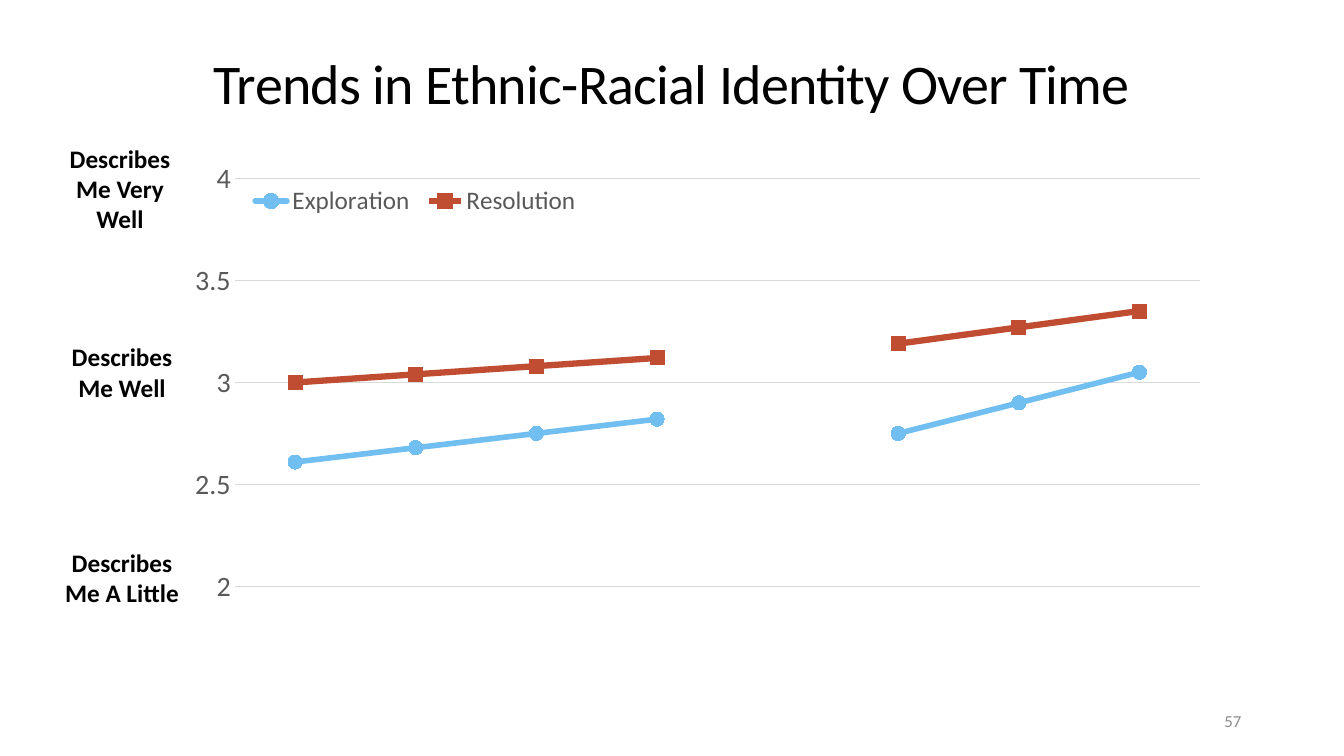
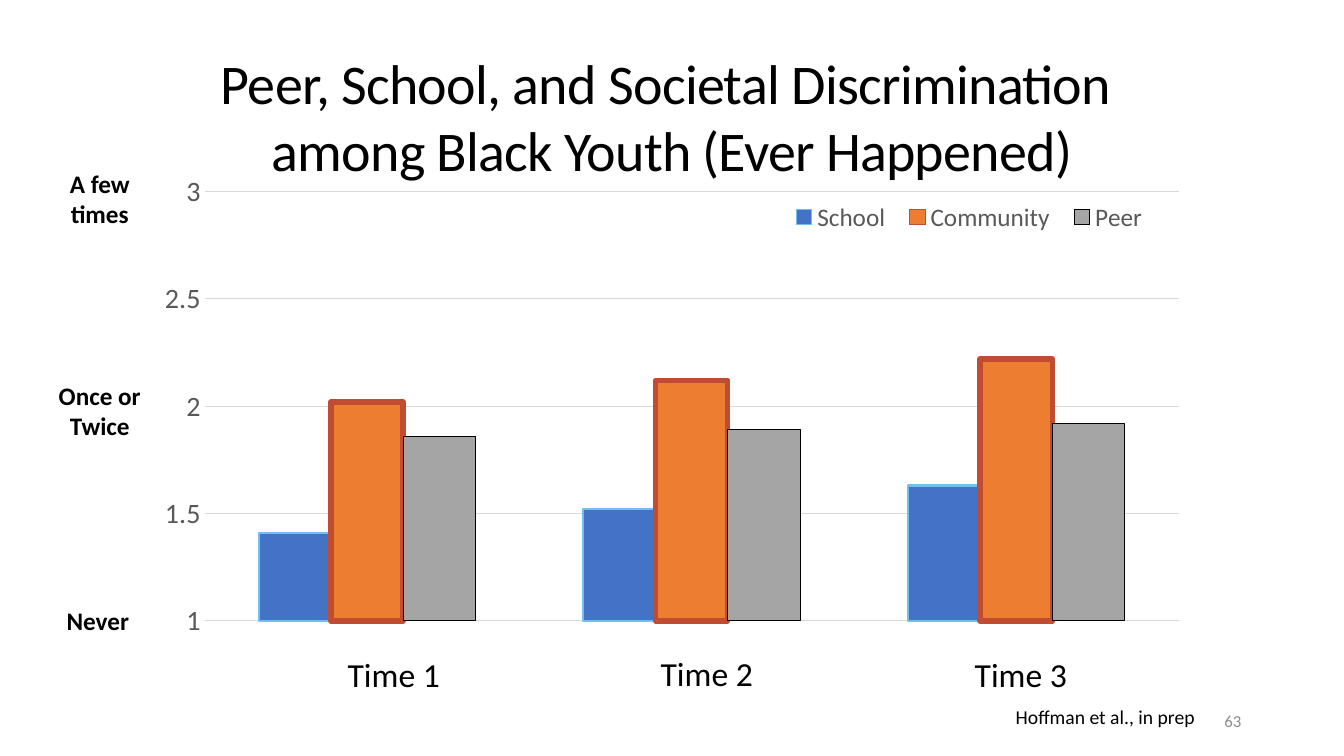
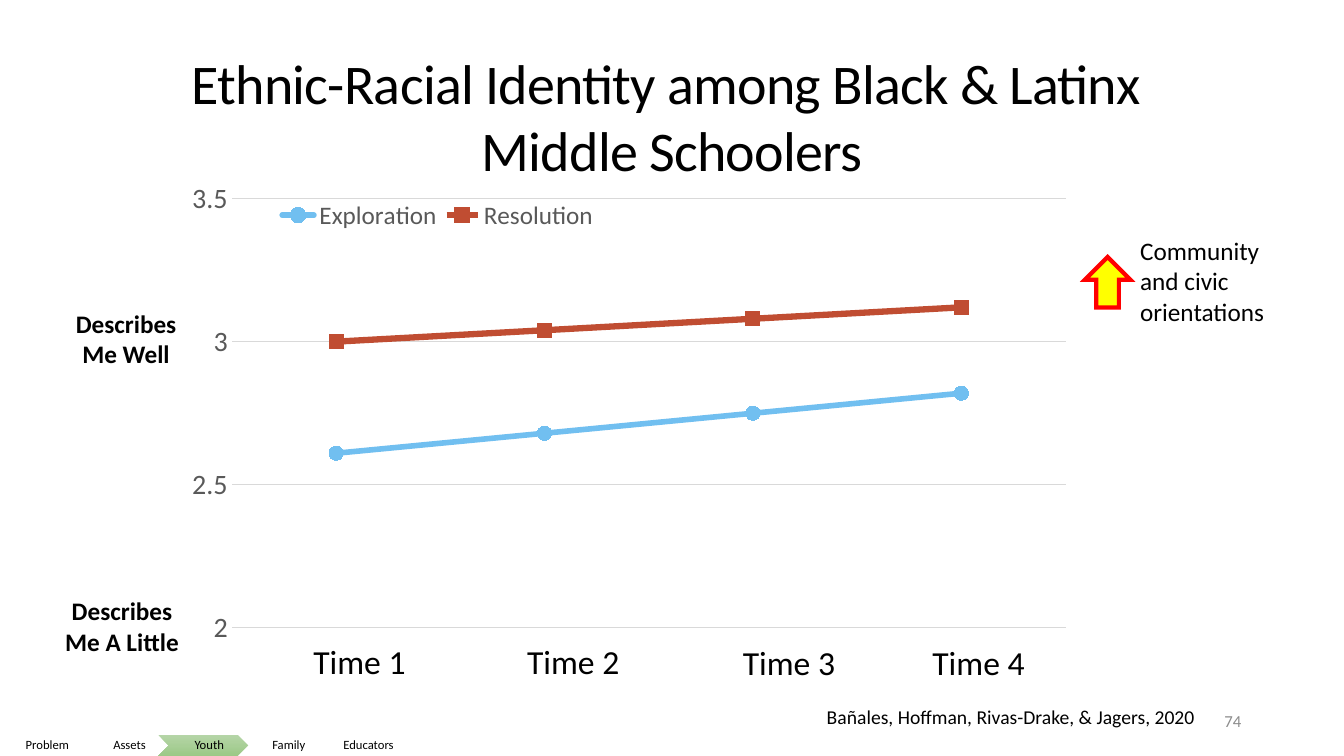
from dataclasses import dataclass

from pptx import Presentation
from pptx.chart.data import CategoryChartData
from pptx.dml.color import RGBColor
from pptx.enum.chart import XL_CHART_TYPE, XL_LEGEND_POSITION, XL_MARKER_STYLE, XL_TICK_MARK
from pptx.enum.shapes import MSO_SHAPE
from pptx.enum.text import MSO_ANCHOR, MSO_AUTO_SIZE, PP_ALIGN
from pptx.oxml import parse_xml
from pptx.oxml.ns import nsdecls
from pptx.util import Inches, Pt

LEFT, CENTER, RIGHT = PP_ALIGN.LEFT, PP_ALIGN.CENTER, PP_ALIGN.RIGHT
TOP, MIDDLE = MSO_ANCHOR.TOP, MSO_ANCHOR.MIDDLE
LINE, COLUMN = XL_CHART_TYPE.LINE_MARKERS, XL_CHART_TYPE.COLUMN_CLUSTERED
MARKERS = (XL_MARKER_STYLE.CIRCLE, XL_MARKER_STYLE.SQUARE)
NO_TICKS = XL_TICK_MARK.NONE
LEGEND_BOTTOM = XL_LEGEND_POSITION.BOTTOM
RECTANGLE, UP_ARROW = MSO_SHAPE.RECTANGLE, MSO_SHAPE.UP_ARROW
HOME_PLATE, CHEVRON = MSO_SHAPE.PENTAGON, MSO_SHAPE.CHEVRON
TITLE_ONLY = 5


@dataclass(frozen=True)
class Theme:
    font = "Calibri"
    black = RGBColor(0, 0, 0)
    white = RGBColor(255, 255, 255)
    page = RGBColor.from_string("8C8C8C")
    axis = RGBColor.from_string("595959")
    grid = RGBColor.from_string("D9D9D9")
    sky = RGBColor.from_string("71BFF0")
    brick = RGBColor.from_string("C04D32")
    blue = RGBColor.from_string("4472C4")
    orange = RGBColor.from_string("ED7D31")
    grey = RGBColor.from_string("A5A5A5")
    yellow = RGBColor.from_string("FFFF00")
    red = RGBColor.from_string("FF0000")
    greens = (RGBColor.from_string("B5D5A7"), RGBColor.from_string("9CC987"))
    title_size = 40
    time_size = 24
    axis_size = 20
    label_size = 18
    source_size = 14
    page_size = 12
    nav_size = 9


T = Theme()
LINE_STYLES = ((T.sky, 4), (T.brick, 4.5))
COLUMN_STYLES = ((T.blue, T.sky, 1.5), (T.orange, T.brick, 4), (T.grey, T.black, 0.5))
NAV_ITEMS = ("Problem", "Assets", "Youth", "Family", "Educators")


def inches(box):
    return [Inches(v) for v in box]


def set_font(font, size, color=T.black, bold=False):
    font.name, font.size, font.bold = T.font, Pt(size), bold
    font.color.rgb = color


def add_run(p, text, size, color=T.black, bold=False):
    r = p.add_run()
    r.text = text
    set_font(r.font, size, color, bold)
    return r


def fill_frame(tf, text, size, align=CENTER, anchor=TOP, color=T.black, bold=False):
    tf.word_wrap, tf.vertical_anchor = True, anchor
    p = tf.paragraphs[0]
    p.alignment = align
    add_run(p, text, size, color, bold)


def add_text(s, box, *args, **style):
    fill_frame(s.shapes.add_textbox(*inches(box)).text_frame, *args, **style)


def add_slide(prs, title_lines, page):
    s = prs.slides.add_slide(prs.slide_layouts[TITLE_ONLY])
    title = s.shapes.title
    height = 0.08 + 0.6 * len(title_lines)
    title.left, title.top, title.width, title.height = inches((0, 0.43, 13.33, height))
    tf = title.text_frame
    tf.auto_size, tf.vertical_anchor = MSO_AUTO_SIZE.NONE, TOP
    for i, line in enumerate(title_lines):
        p = tf.add_paragraph() if i else tf.paragraphs[0]
        p.alignment = CENTER
        r = add_run(p, line, T.title_size)
        r.font._element.set("spc", "-50")
    add_text(s, (9.41, 6.95, 3, 0.4), page, T.page_size, RIGHT, MIDDLE, T.page)
    return s


def add_scale_labels(s, labels, width):
    """Bold wording beside the value axis, from (left, top, height, text)."""
    for left, top, height, text in labels:
        add_text(s, (left, top, width, height), text, T.label_size, bold=True)


def add_time_labels(s, places):
    """Time labels from (left, top, width); the first one stands on a white panel."""
    for number, (left, top, width) in enumerate(places, 1):
        box = (left, top, width, 0.5)
        text = f"Time {number}"
        if number == 1:
            fill_frame(add_shape(s, RECTANGLE, box, T.white).text_frame, text, T.time_size)
        else:
            add_text(s, box, text, T.time_size)


def add_source(s, text, left):
    add_text(s, (left, 6.94, 11.95 - left, 0.34), text, T.source_size, RIGHT)


def manual_layout(box, chart_box, target=""):
    """Layout element that puts a chart part at a slide position in inches."""
    left, top, width, height = chart_box
    fractions = ((box[0] - left) / width, (box[1] - top) / height,
                 box[2] / width, box[3] / height)
    values = "".join(f'<c:{k} val="{v:.4f}"/>' for k, v in zip("xywh", fractions))
    return parse_xml(f'<c:layout {nsdecls("c")}><c:manualLayout>{target}<c:xMode val="edge"/>'
                     f'<c:yMode val="edge"/>{values}</c:manualLayout></c:layout>')


def place_chart_parts(chart, box, plot_box, legend_box):
    plot_area = chart.element.xpath(".//c:plotArea")[0]
    legend = chart.element.xpath(".//c:legend")[0]
    for parent in (plot_area, legend):
        for old in parent.xpath("./c:layout"):
            parent.remove(old)
    plot_area.insert(0, manual_layout(plot_box, box, '<c:layoutTarget val="inner"/>'))
    legend.xpath("./c:legendPos")[0].addnext(manual_layout(legend_box, box))


def add_chart(s, kind, box, plot_box, legend_box, limits, series):
    data = CategoryChartData()
    data.categories = [str(i + 1) for i in range(len(series[0][1]))]
    for name, values in series:
        data.add_series(name, values)
    chart = s.shapes.add_chart(kind, *inches(box), data).chart
    chart.has_title = False
    set_font(chart.font, 10)
    chart.category_axis.visible = False

    axis = chart.value_axis
    axis.minimum_scale, axis.maximum_scale = limits
    axis.major_unit = 0.5
    axis.major_tick_mark = axis.minor_tick_mark = NO_TICKS
    axis.format.line.fill.background()
    set_font(axis.tick_labels.font, T.axis_size, T.axis)
    set_line(axis.major_gridlines.format.line, T.grid, 0.75)

    chart.has_legend = True
    chart.legend.position = LEGEND_BOTTOM
    chart.legend.include_in_layout = False
    set_font(chart.legend.font, T.label_size, T.axis)
    place_chart_parts(chart, box, plot_box, legend_box)
    return chart


def set_line(line, color, width):
    line.color.rgb, line.width = color, Pt(width)


def add_line_chart(s, box, plot_box, legend_box, limits, series):
    chart = add_chart(s, LINE, box, plot_box, legend_box, limits, series)
    chart.plots[0].vary_by_categories = False
    for ser, (color, width), style in zip(chart.plots[0].series, LINE_STYLES, MARKERS):
        ser.smooth = False
        set_line(ser.format.line, color, width)
        if style == MARKERS[0]:
            ser._element.xpath("./c:spPr/a:ln")[0].set("cap", "rnd")
        marker = ser.marker
        marker.style, marker.size = style, 10
        marker.format.fill.solid()
        marker.format.fill.fore_color.rgb = color
        set_line(marker.format.line, color, 0.75)


def add_column_chart(s, box, plot_box, legend_box, limits, series):
    chart = add_chart(s, COLUMN, box, plot_box, legend_box, limits, series)
    plot = chart.plots[0]
    plot.vary_by_categories = False
    plot.gap_width, plot.overlap = 150, 0
    for ser, (fill, outline, width) in zip(plot.series, COLUMN_STYLES):
        ser.invert_if_negative = False
        ser.format.fill.solid()
        ser.format.fill.fore_color.rgb = fill
        set_line(ser.format.line, outline, width)


def add_shape(s, kind, box, fill):
    sp = s.shapes.add_shape(kind, *inches(box))
    sp.shadow.inherit = False
    sp.line.fill.background()
    sp.fill.solid()
    sp.fill.fore_color.rgb = fill
    return sp


def add_up_arrow(s, box):
    arrow = add_shape(s, UP_ARROW, box, T.yellow)
    set_line(arrow.line, T.red, 3)
    arrow.element.xpath("./p:spPr/a:ln")[0].append(
        parse_xml(f'<a:miter {nsdecls("a")} lim="800000"/>'))


def add_nav(s, current):
    """Row of chevrons along the foot, with the current section in green."""
    for i, name in enumerate(NAV_ITEMS):
        sp = add_shape(s, CHEVRON if i else HOME_PLATE,
                       (-0.01 + 0.79 * i, 7.29, 0.99, 0.21), T.white)
        if name == current:
            sp.fill.gradient()
            sp.fill.gradient_angle = 270
            for stop, color in zip(sp.fill.gradient_stops, T.greens):
                stop.color.rgb = color
        tf = sp.text_frame
        tf.margin_left, tf.margin_top, tf.margin_right, tf.margin_bottom = inches(
            (0.03, 0.03, 0.01, 0.03))
        fill_frame(tf, name, T.nav_size, anchor=MIDDLE)
        tf.paragraphs[0].line_spacing = 0.9


def build_trends(prs):
    s = add_slide(prs, ["Trends in Ethnic-Racial Identity Over Time"], "57")
    add_line_chart(
        s, (1.73, 1.5, 10.39, 5.07), (2.33, 1.77, 9.57, 4.05), (2.42, 1.82, 3.4, 0.35), (2, 4),
        [("Exploration", (2.61, 2.68, 2.75, 2.82, None, 2.75, 2.9, 3.05)),
         ("Resolution", (3, 3.04, 3.08, 3.12, None, 3.19, 3.27, 3.35))])
    add_scale_labels(s, [(0.5, 5.38, 0.71, "Describes Me A Little"),
                         (0.5, 3.34, 0.69, "Describes Me Well"),
                         (0.48, 1.37, 1.01, "Describes Me Very Well")], 1.42)


def build_discrimination(prs):
    s = add_slide(prs, ["Peer, School, and Societal Discrimination ",
                        "among Black Youth (Ever Happened)"], "63")
    add_column_chart(
        s, (1.43, 1.62, 10.48, 5.29), (2.03, 1.9, 9.66, 4.26), (7.74, 1.98, 3.75, 0.35), (1, 3),
        [("School", (1.41, 1.52, 1.63)),
         ("Community", (2.02, 2.12, 2.22)),
         ("Peer", (1.86, 1.89, 1.92))])
    add_time_labels(s, [(3.18, 6.44, 1.45), (6.38, 6.43, 1.26), (9.56, 6.44, 1.13)])
    add_source(s, "Hoffman et al., in prep", 8.47)
    add_scale_labels(s, [(0.34, 5.96, 0.4, "Never"),
                         (0.36, 3.72, 0.71, "Once or Twice"),
                         (0.36, 1.62, 0.71, "A few times")], 1.26)


def build_middle_schoolers(prs):
    s = add_slide(prs, ["Ethnic-Racial Identity among Black & Latinx ",
                        "Middle Schoolers"], "74")
    add_source(s, "Bañales, Hoffman, Rivas-Drake, & Jagers, 2020", 7.85)
    add_line_chart(
        s, (1.73, 1.69, 9.03, 5.29), (2.3, 1.97, 8.27, 4.26), (2.7, 1.96, 3.28, 0.35), (2, 3.5),
        [("Exploration", (2.61, 2.68, 2.75, 2.82)),
         ("Resolution", (3, 3.04, 3.08, 3.12))])
    add_time_labels(s, [(2.78, 6.31, 1.57), (5, 6.31, 1.37),
                        (7.21, 6.32, 1.23), (9.09, 6.32, 1.23)])
    add_scale_labels(s, [(0.5, 5.86, 0.71, "Describes Me A Little"),
                         (0.54, 3.01, 0.69, "Describes Me Well")], 1.42)
    add_text(s, (11.21, 2.28, 1.51, 1.01), "Community and civic orientations",
             T.label_size, LEFT, MIDDLE)
    add_up_arrow(s, (10.76, 2.55, 0.45, 0.5))
    add_nav(s, "Youth")


def main():
    prs = Presentation()
    prs.slide_width, prs.slide_height = Inches(13.33), Inches(7.5)
    build_trends(prs)
    build_discrimination(prs)
    build_middle_schoolers(prs)
    prs.save("out.pptx")


if __name__ == "__main__":
    main()
